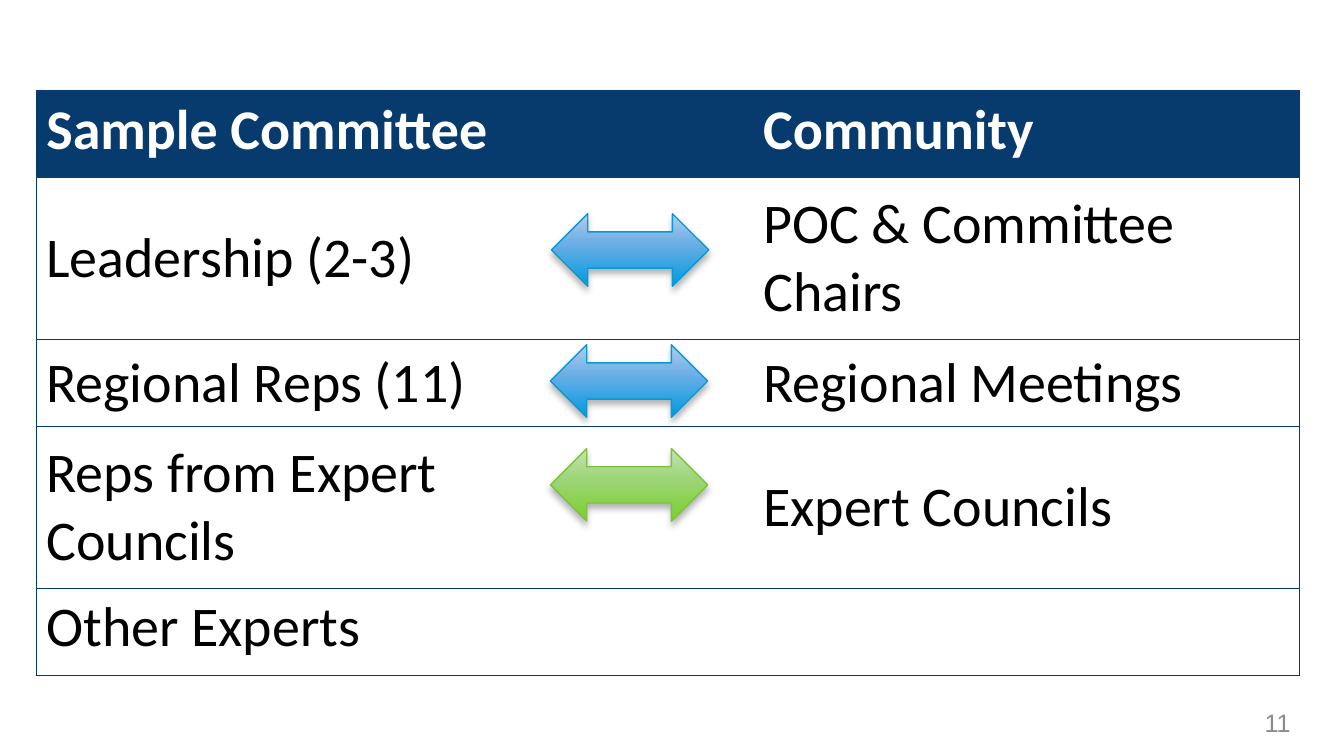
from dataclasses import dataclass

from pptx import Presentation
from pptx.dml.color import RGBColor
from pptx.enum.shapes import MSO_SHAPE
from pptx.enum.text import MSO_ANCHOR, PP_ALIGN
from pptx.oxml import parse_xml
from pptx.oxml.ns import nsdecls
from pptx.util import Inches, Pt


@dataclass(frozen=True)
class Theme:
    navy: str = "073B6E"
    white: str = "FFFFFF"
    black: str = "000000"
    gray: str = "8C8C8C"
    blue_line: str = "0A98D6"
    green_line: str = "7DC23D"
    blue_stops: tuple = ((0, "009ADE"), (60, "6DAFE6"), (100, "B0CEED"))
    green_stops: tuple = ((0, "7BD02D"), (60, "9DD579"), (100, "C5E4B5"))
    table_font: str = "Calibri"
    number_font: str = "Arial"
    table_size: int = 40
    number_size: int = 18


THEME = Theme()
COLUMN_WIDTHS = (5.61, 1.5, 5.42)
ROW_HEIGHTS = (0.86, 1.61, 0.86, 1.61, 0.86)
ROWS = (
    ("Sample Committee", "", "Community"),
    ("Leadership (2-3)", "", "POC & Committee Chairs"),
    ("Regional Reps (11)", "", "Regional Meetings"),
    ("Reps from Expert Councils", "", "Expert Councils"),
    ("Other Experts", "", ""),
)
ARROWS = (
    (5.47, 2.12, THEME.blue_stops, THEME.blue_line),
    (5.46, 3.42, THEME.blue_stops, THEME.blue_line),
    (5.46, 4.45, THEME.green_stops, THEME.green_line),
)


def style_paragraph(paragraph, font_name, size, color, bold=False):
    font = paragraph.font
    font.name = font_name
    font.size = Pt(size)
    font.bold = bold
    font.color.rgb = RGBColor.from_string(color)


def set_borders(cell, visible_sides):
    properties = cell._tc.get_or_add_tcPr()
    for side in "LRTB":
        paint = "<a:noFill/>"
        if side in visible_sides:
            paint = f'<a:solidFill><a:srgbClr val="{THEME.navy}"/></a:solidFill>'
        properties.append(parse_xml(
            f'<a:ln{side} {nsdecls("a")} w="{Pt(1)}">{paint}</a:ln{side}>'))


def fill_cell(cell, text, is_header, anchor, visible_sides):
    set_borders(cell, visible_sides)
    cell.fill.solid()
    cell.fill.fore_color.rgb = RGBColor.from_string(
        THEME.navy if is_header else THEME.white)
    cell.vertical_anchor = anchor
    cell.text = text
    style_paragraph(cell.text_frame.paragraphs[0], THEME.table_font, THEME.table_size,
                    THEME.white if is_header else THEME.black, is_header)


def add_committee_table(slide):
    table = slide.shapes.add_table(
        len(ROWS), len(COLUMN_WIDTHS), Inches(0.36), Inches(0.9),
        Inches(sum(COLUMN_WIDTHS)), Inches(sum(ROW_HEIGHTS))).table
    table.horz_banding = False
    for column, width in zip(table.columns, COLUMN_WIDTHS):
        column.width = Inches(width)
    last_row, last_column = len(ROWS) - 1, len(COLUMN_WIDTHS) - 1
    for row_index, texts in enumerate(ROWS):
        table.rows[row_index].height = Inches(ROW_HEIGHTS[row_index])
        anchor = MSO_ANCHOR.TOP if row_index in (0, last_row) else MSO_ANCHOR.MIDDLE
        for column_index, text in enumerate(texts):
            sides = "TB" + {0: "L", last_column: "R"}.get(column_index, "")
            fill_cell(table.cell(row_index, column_index), text,
                      row_index == 0, anchor, sides)


def add_double_arrow(slide, left, top, stops, line_color):
    shape = slide.shapes.add_shape(
        MSO_SHAPE.LEFT_RIGHT_ARROW, Inches(left), Inches(top), Inches(1.56), Inches(0.72))
    shape.line.color.rgb = RGBColor.from_string(line_color)
    shape.line.width = Pt(1)
    stop_list = "".join(
        f'<a:gs pos="{position * 1000}"><a:srgbClr val="{color}"/></a:gs>'
        for position, color in stops)
    properties = shape._element.spPr
    properties.prstGeom.addnext(parse_xml(
        f'<a:gradFill {nsdecls("a")} rotWithShape="1"><a:gsLst>{stop_list}</a:gsLst>'
        '<a:lin ang="16200000" scaled="0"/></a:gradFill>'))
    properties.append(parse_xml(
        f'<a:effectLst {nsdecls("a")}><a:outerShdw blurRad="{Pt(5)}" dist="{Pt(3)}" '
        f'dir="5400000" rotWithShape="0"><a:srgbClr val="{THEME.black}">'
        '<a:alpha val="30000"/></a:srgbClr></a:outerShdw></a:effectLst>'))


def add_slide_number(slide, text):
    box = slide.shapes.add_textbox(Inches(10.64), Inches(6.97), Inches(2.26), Inches(0.4))
    frame = box.text_frame
    frame.word_wrap = True
    frame.vertical_anchor = MSO_ANCHOR.MIDDLE
    frame.text = text
    paragraph = frame.paragraphs[0]
    paragraph.alignment = PP_ALIGN.RIGHT
    style_paragraph(paragraph, THEME.number_font, THEME.number_size, THEME.gray)


def main():
    presentation = Presentation()
    presentation.slide_width = Inches(13.33)
    presentation.slide_height = Inches(7.5)
    slide = presentation.slides.add_slide(presentation.slide_layouts[6])
    add_slide_number(slide, "11")
    add_committee_table(slide)
    for arrow in ARROWS:
        add_double_arrow(slide, *arrow)
    presentation.save("out.pptx")


if __name__ == "__main__":
    main()
